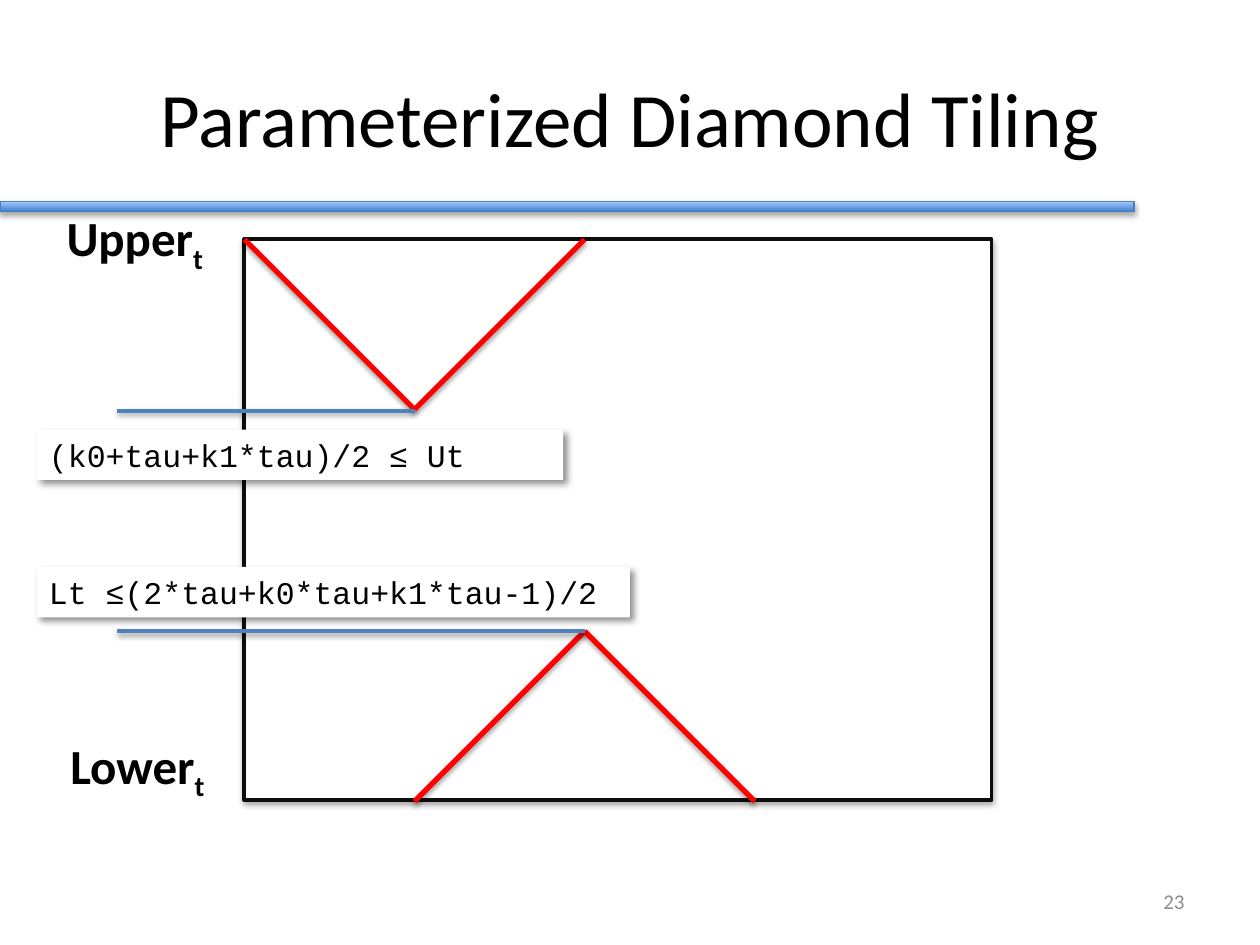
from dataclasses import dataclass

from lxml import etree
from pptx import Presentation
from pptx.dml.color import RGBColor as RGB
from pptx.enum.shapes import MSO_CONNECTOR as CONN, MSO_SHAPE as SHAPE
from pptx.enum.text import MSO_ANCHOR as ANCHOR, MSO_AUTO_SIZE as AUTO, PP_ALIGN as ALIGN
from pptx.oxml.ns import qn
from pptx.util import Inches, Pt


@dataclass(frozen=True)
class Theme:
    body: str = "Calibri"
    code: str = "Courier New"
    black: RGB = RGB(0x00, 0x00, 0x00)
    white: RGB = RGB(0xFF, 0xFF, 0xFF)
    frame: RGB = RGB(0x0D, 0x0D, 0x0D)
    gray: RGB = RGB(0x8C, 0x8C, 0x8C)
    red: RGB = RGB(0xFF, 0x00, 0x00)
    blue: RGB = RGB(0x4F, 0x81, 0xBD)
    bar_line: RGB = RGB(0x4B, 0x7E, 0xBC)
    bar_dark: RGB = RGB(0x3F, 0x80, 0xCE)
    bar_light: RGB = RGB(0xA4, 0xC4, 0xFF)
    title_size: Pt = Pt(44)
    label_size: Pt = Pt(28)
    code_size: Pt = Pt(18)
    number_size: Pt = Pt(12)


theme = Theme()


def add_shadow(sp, opacity, blur, dist, angle):
    """Give a shape or connector an outer shadow; lengths in points."""
    spPr = sp._element.spPr
    for old in spPr.findall(qn("a:effectLst")):
        spPr.remove(old)
    effects = etree.SubElement(spPr, qn("a:effectLst"))
    outer = etree.SubElement(effects, qn("a:outerShdw"), blurRad=str(Pt(blur)),
                             dist=str(Pt(dist)), dir=str(angle * 60000), rotWithShape="0")
    color = etree.SubElement(outer, qn("a:srgbClr"), val="000000")
    etree.SubElement(color, qn("a:alpha"), val=str(opacity * 1000))


def style_text(tf, font, size, color, bold=False, align=ALIGN.LEFT):
    p = tf.paragraphs[0]
    p.alignment = align
    for r in p.runs:
        r.font.name, r.font.size, r.font.bold = font, size, bold
        r.font.color.rgb = color


prs = Presentation()
prs.slide_width, prs.slide_height = Inches(10), Inches(7.5)
s = prs.slides.add_slide(prs.slide_layouts[5])

# Title
title = s.shapes.title
title.left, title.top, title.width, title.height = map(Inches, (0.5, 0.3, 9, 1.25))
title.text_frame.text = "Parameterized Diamond Tiling"
title.text_frame.vertical_anchor = ANCHOR.MIDDLE
style_text(title.text_frame, theme.body, theme.title_size, theme.black, align=ALIGN.CENTER)

# Bar under the title
bar = s.shapes.add_shape(SHAPE.RECTANGLE, Inches(0), Inches(1.6), Inches(9), Inches(0.08))
bar.fill.gradient()
bar.fill.gradient_angle = 90
for stop, color in zip(bar.fill.gradient_stops, (theme.bar_dark, theme.bar_light)):
    stop.color.rgb = color
bar.line.color.rgb, bar.line.width = theme.bar_line, Pt(0.75)
add_shadow(bar, 35, 3.1, 1.8, 90)

# Iteration space
left, top, width, height = 1.94, 1.9, 5.93, 4.45
space = s.shapes.add_shape(SHAPE.RECTANGLE, *map(Inches, (left, top, width, height)))
space.fill.solid()
space.fill.fore_color.rgb = theme.white
space.line.color.rgb, space.line.width = theme.frame, Pt(2.25)
add_shadow(space, 35, 3.1, 1.8, 90)

# Slide number
number = s.shapes.add_textbox(Inches(7.17), Inches(6.95), Inches(2.33), Inches(0.4))
number.text_frame.text = "23"
number.text_frame.vertical_anchor = ANCHOR.MIDDLE
style_text(number.text_frame, theme.body, theme.number_size, theme.gray, align=ALIGN.RIGHT)

# Bound conditions
for text, y, w in (("Lt ≤(2*tau+k0*tau+k1*tau-1)/2", 4.5, 4.71),
                   ("(k0+tau+k1*tau)/2 ≤ Ut", 3.41, 4.18)):
    box = s.shapes.add_textbox(Inches(0.29), Inches(y), Inches(w), Inches(0.4))
    box.fill.solid()
    box.fill.fore_color.rgb = theme.white
    box.line.fill.background()
    add_shadow(box, 43, 4, 3, 45)
    tf = box.text_frame
    tf.word_wrap, tf.auto_size = True, AUTO.SHAPE_TO_FIT_TEXT
    tf.text = text
    style_text(tf, theme.code, theme.code_size, theme.black)

# Time bound labels with subscript t
for text, x, y, w in (("Lower", 0.46, 5.79, 1.3), ("Upper", 0.43, 1.6, 1.31)):
    label = s.shapes.add_textbox(Inches(x), Inches(y), Inches(w), Inches(0.57))
    tf = label.text_frame
    tf.word_wrap, tf.auto_size = False, AUTO.SHAPE_TO_FIT_TEXT
    tf.text = text
    sub = tf.paragraphs[0].add_run()
    sub.text = "t"
    style_text(tf, theme.body, theme.label_size, theme.black, bold=True)
    sub.font._element.set("baseline", "-25000")

# Diamond halves (red) and the levels of their tips (blue)
half = 1.35
level_x = 0.93
upper_tip = (left + half, top + half)
lower_tip = (left + 2 * half, 5.01)
lines = []
for (x, y), base_y in ((upper_tip, top), (lower_tip, lower_tip[1] + half)):
    lines.append(((x, y), (x - half, base_y), theme.red, 3))
    lines.append(((x + half, base_y), (x, y), theme.red, 3))
for x, y in ((upper_tip[0], 3.26), lower_tip):
    lines.append(((x, y), (level_x, y), theme.blue, 2))

for start, end, color, weight in lines:
    line = s.shapes.add_connector(CONN.STRAIGHT, *map(Inches, start + end))
    line.line.color.rgb, line.line.width = color, Pt(weight)
    add_shadow(line, 38, 3.1, 1.6, 90)

prs.save("out.pptx")
